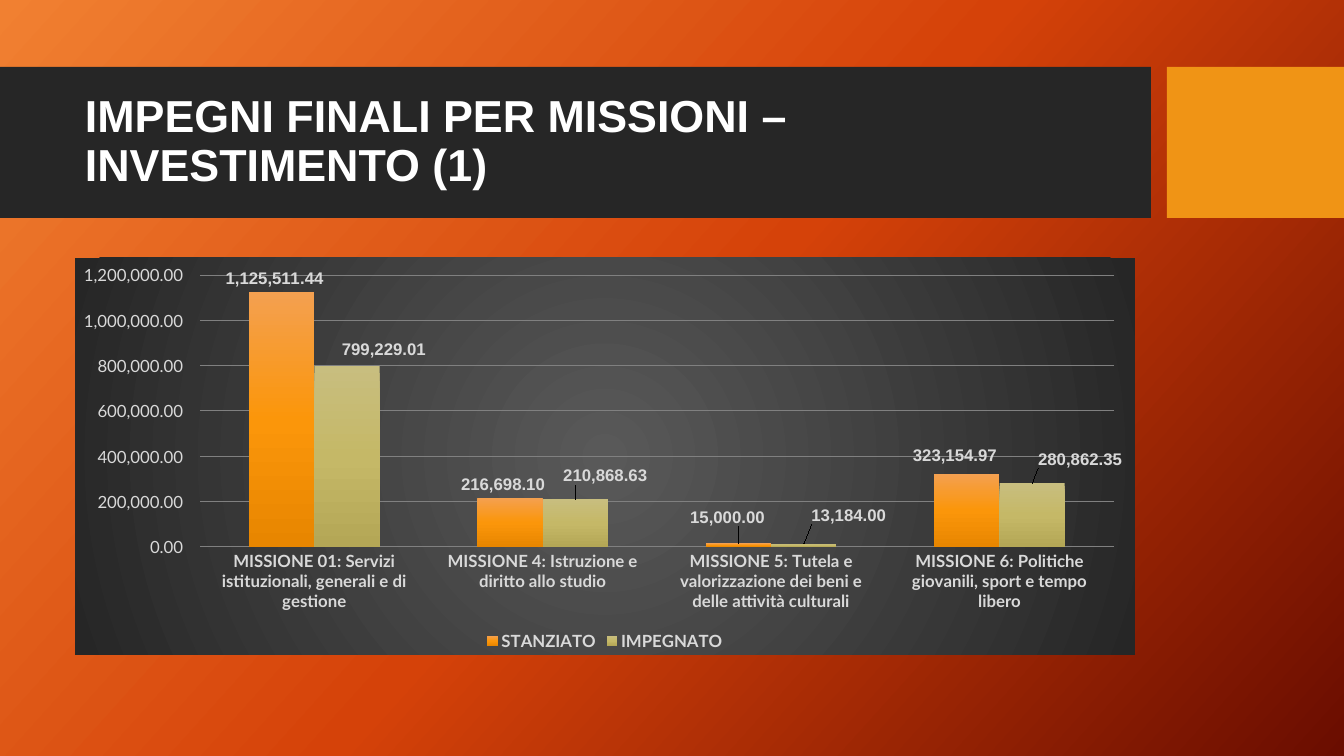
from pptx import Presentation
from pptx.chart.data import CategoryChartData
from pptx.dml.color import RGBColor
from pptx.enum.chart import XL_CHART_TYPE as ChartType, XL_LABEL_POSITION as LabelPos
from pptx.enum.chart import XL_LEGEND_POSITION as LegendPos, XL_TICK_MARK as Tick
from pptx.enum.shapes import MSO_SHAPE as Shape
from pptx.enum.text import MSO_ANCHOR as Anchor
from pptx.oxml import parse_xml
from pptx.oxml.ns import nsdecls, qn
from pptx.util import Pt

COLORS = {"white": "FFFFFF", "band": "262626", "accent": "F09415", "label": "D9D9D9", "grid": "808080"}
GRADIENTS = {
    "page": [(0, "F18031"), (50, "D54209"), (100, "6A0D00")],
    "chart": [(0, "595959"), (100, "262626")],
    "STANZIATO": [(0, "F4A050"), (50, "FB960A"), (100, "E88600")],
    "IMPEGNATO": [(0, "C8BE7F"), (50, "C5B867"), (100, "B4A756")],
}
CATEGORIES = [
    "MISSIONE 01: Servizi istituzionali, generali e di gestione",
    "MISSIONE 4: Istruzione e diritto allo studio",
    "MISSIONE 5: Tutela e valorizzazione dei beni e delle attività culturali",
    "MISSIONE 6: Politiche giovanili, sport e tempo libero",
]
SPACED_FORMAT = r"#,##0.00\ _€"
SERIES = {
    "STANZIATO": {
        "values": [1125511.44, 216698.1, 15000, 323154.97],
        "format": SPACED_FORMAT,
        "shifts": {2: (-4, -13), 3: (-5, -5)},
    },
    "IMPEGNATO": {
        "values": [799229.01, 210868.63, 13184, 280862.35],
        "format": "#,##0.00",
        "shifts": {0: (37, -3), 1: (30, -10), 2: (45, -15), 3: (48, -11)},
    },
}


def px(length):
    return round(length * 914400 / 100.8)


def apply(target, values):
    for name, value in values.items():
        setattr(target, name, value)


def gradient(stops, angle=None):
    marks = "".join(
        f'<a:gs pos="{place * 1000}"><a:srgbClr val="{color}"/></a:gs>' for place, color in stops
    )
    if angle is None:
        course = '<a:path path="circle"><a:fillToRect l="50000" t="50000" r="50000" b="50000"/></a:path>'
    else:
        course = f'<a:lin ang="{angle * 60000}" scaled="0"/>'
    return f'<a:gradFill {nsdecls("a")} rotWithShape="1"><a:gsLst>{marks}</a:gsLst>{course}</a:gradFill>'


def swap_solid(element, stops, angle):
    solid = next(element.iter(qn("a:solidFill")))
    solid.getparent().replace(solid, parse_xml(gradient(stops, angle)))


def manual_layout(**parts):
    items = "".join(f'<c:{name} val="{value}"/>' for name, value in parts.items())
    return parse_xml(f'<c:layout {nsdecls("c")}><c:manualLayout>{items}</c:manualLayout></c:layout>')


class SlideMaker:
    def __init__(self, deck, heading_font, body_font):
        self.page = deck.slides.add_slide(deck.slide_layouts[6])
        self.heading_font = heading_font
        self.body_font = body_font

    def style(self, font, size, color, name, bold=False):
        apply(font, {"size": Pt(size), "name": name, "bold": bold})
        font.color.rgb = RGBColor.from_string(COLORS[color])

    def background(self, stops, angle):
        self.page.background.fill.solid()
        swap_solid(self.page.background._cSld, stops, angle)

    def rect(self, area, color):
        box = self.page.shapes.add_shape(Shape.RECTANGLE, *map(px, area))
        box.shadow.inherit = False
        box.fill.solid()
        box.fill.fore_color.rgb = RGBColor.from_string(COLORS[color])
        box.line.fill.background()

    def title(self, area, text):
        frame = self.page.shapes.add_textbox(*map(px, area)).text_frame
        apply(frame, {"word_wrap": True, "vertical_anchor": Anchor.MIDDLE})
        para = frame.paragraphs[0]
        para.line_spacing = 0.9
        span = para.add_run()
        span.text = text
        self.style(span.font, 32, "white", self.heading_font, True)

    def axis(self, axis, bold):
        apply(axis, {"major_tick_mark": Tick.NONE, "minor_tick_mark": Tick.NONE})
        axis.format.line.fill.background()
        self.style(axis.tick_labels.font, 12, "label", self.body_font, bold)

    def labels(self, series, number_format, shifts, width, height):
        labels = series.data_labels
        apply(labels, {
            "show_value": True, "number_format": number_format,
            "number_format_is_linked": False, "position": LabelPos.OUTSIDE_END,
        })
        self.style(labels.font, 12, "label", self.heading_font, True)
        for index, (across, down) in shifts.items():
            label = series.points[index].data_label
            self.style(label.font, 12, "label", self.heading_font, True)
            label.position = LabelPos.OUTSIDE_END
            item = next(
                node for node in series._element.iter(qn("c:dLbl"))
                if node.find(qn("c:idx")).get("val") == str(index)
            )
            layout = manual_layout(x=round(across / width, 4), y=round(down / height, 4))
            item.find(qn("c:idx")).addnext(layout)
            layout.addnext(parse_xml(
                f'<c:numFmt {nsdecls("c")} formatCode="{number_format}" sourceLinked="0"/>'
            ))

    def column_chart(self, area, categories, rows):
        data = CategoryChartData(number_format="#,##0.00")
        data.categories = categories
        for name, row in rows.items():
            data.add_series(name, row["values"])
        chart = self.page.shapes.add_chart(
            ChartType.COLUMN_CLUSTERED, *map(px, area), data
        ).chart
        self.style(chart.font, 10, "white", self.body_font)
        apply(chart, {"has_title": False, "has_legend": True})
        apply(chart.legend, {"position": LegendPos.BOTTOM, "include_in_layout": False})
        self.style(chart.legend.font, 12, "label", self.body_font, True)
        self.axis(chart.category_axis, True)
        values = chart.value_axis
        self.axis(values, False)
        apply(values, {"minimum_scale": 0, "maximum_scale": 1200000, "major_unit": 200000})
        apply(values.tick_labels, {"number_format": SPACED_FORMAT, "number_format_is_linked": False})
        grid = values.major_gridlines.format.line
        grid.color.rgb = RGBColor.from_string(COLORS["grid"])
        grid.width = Pt(0.75)
        plot = chart.plots[0]
        apply(plot, {"gap_width": 150, "overlap": 0, "vary_by_categories": False})
        for series in plot.series:
            row = rows[series.name]
            series.format.fill.solid()
            series.format.fill.fore_color.rgb = RGBColor.from_string(COLORS["accent"])
            swap_solid(series._element, GRADIENTS[series.name], 90)
            self.labels(series, row["format"], row["shifts"], *area[2:])
        space = chart._chartSpace
        space.find(qn("c:chart")).addnext(parse_xml(
            f'<c:spPr {nsdecls("c", "a")}>{gradient(GRADIENTS["chart"])}<a:ln><a:noFill/></a:ln></c:spPr>'
        ))
        plot_area = next(space.iter(qn("c:plotArea")))
        for layout in plot_area.findall(qn("c:layout")):
            plot_area.remove(layout)
        plot_area.insert(0, manual_layout(
            layoutTarget="inner", xMode="edge", yMode="edge", x=0.118, y=0.043, w=0.862, h=0.685
        ))


def main():
    deck = Presentation()
    apply(deck, {"slide_width": px(1344), "slide_height": px(756)})
    maker = SlideMaker(deck, "Arial", "Lato")
    maker.background(GRADIENTS["page"], 42)
    maker.rect((0, 67, 1151, 151), "band")
    maker.rect((1167, 67, 177, 151), "accent")
    maker.title((75, 83, 1060, 119), "IMPEGNI FINALI PER MISSIONI – INVESTIMENTO (1)")
    maker.column_chart((75, 258, 1060, 397), CATEGORIES, SERIES)
    deck.save("out.pptx")


if __name__ == "__main__":
    main()
